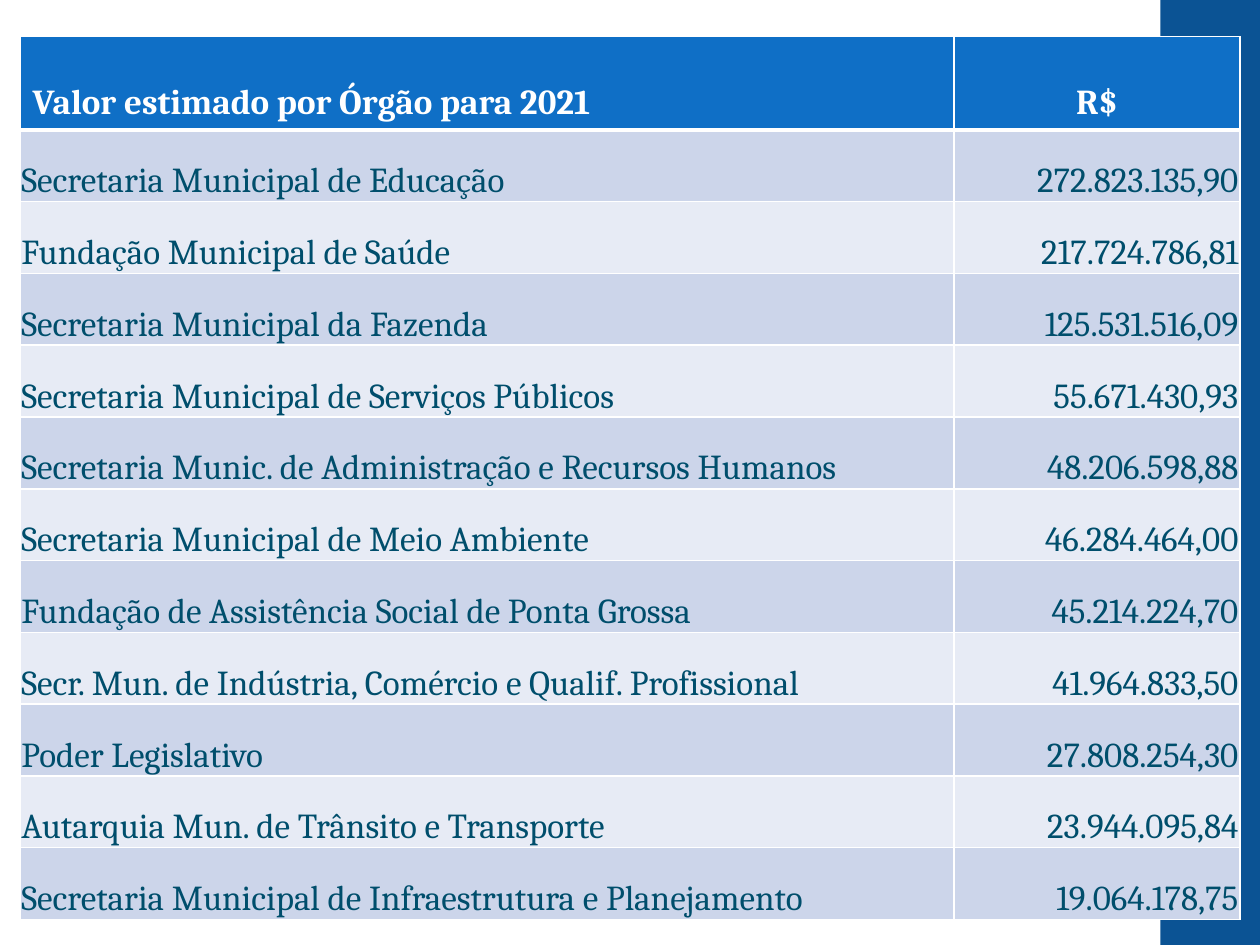
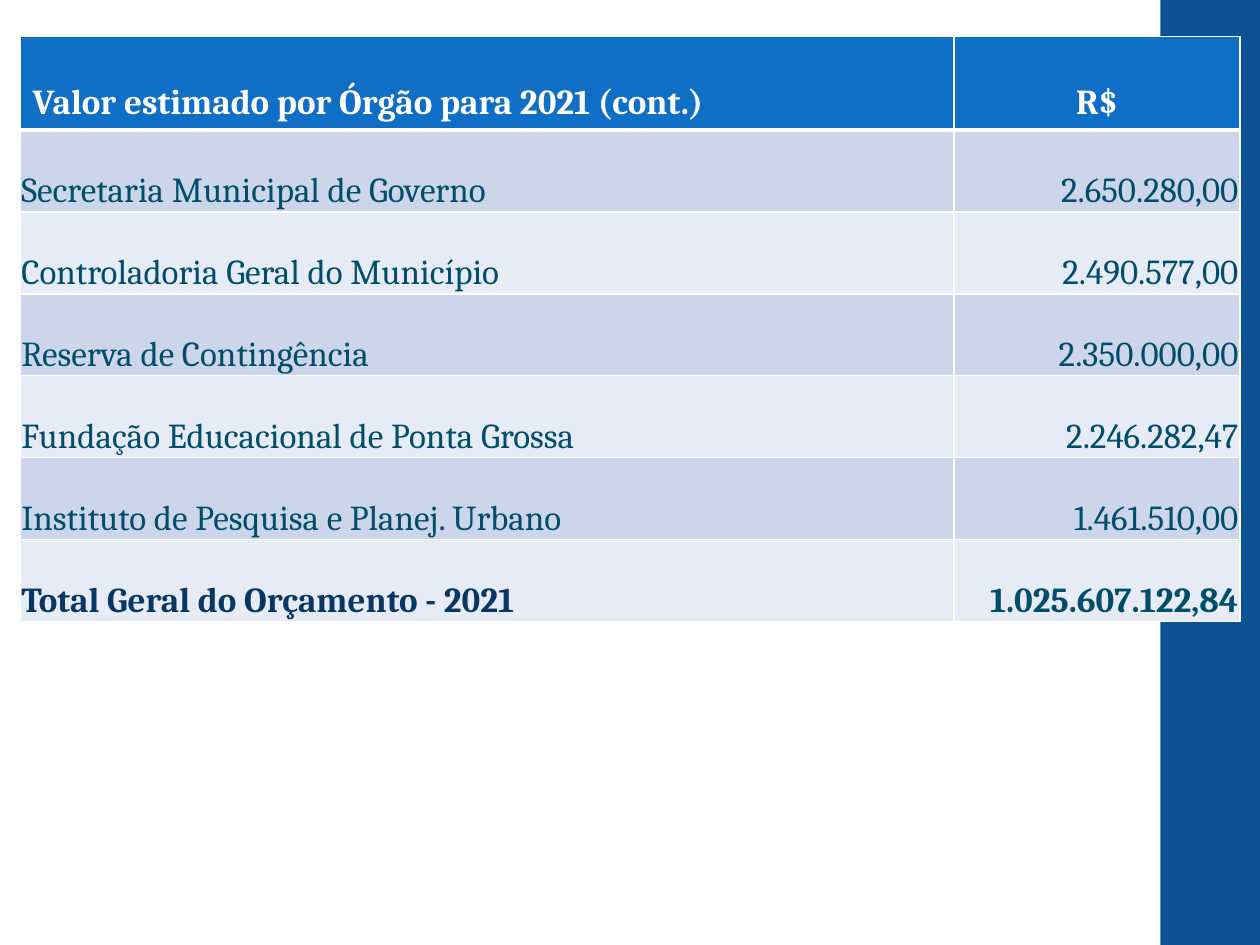
from dataclasses import dataclass

from lxml import etree
from pptx import Presentation
from pptx.dml.color import RGBColor
from pptx.enum.shapes import MSO_SHAPE
from pptx.enum.text import MSO_ANCHOR, PP_ALIGN
from pptx.oxml.ns import qn
from pptx.presentation import Presentation as Deck
from pptx.slide import Slide
from pptx.table import _Cell
from pptx.util import Inches, Pt

RECTANGLE = MSO_SHAPE.RECTANGLE
LEFT, CENTER, RIGHT = PP_ALIGN.LEFT, PP_ALIGN.CENTER, PP_ALIGN.RIGHT
MIDDLE, BOTTOM = MSO_ANCHOR.MIDDLE, MSO_ANCHOR.BOTTOM


@dataclass(frozen=True)
class Theme:
    font: str = "Cambria"
    size: int = 20
    side_band: str = "0B5394"
    header: str = "0F6FC6"
    stripes: tuple[str, str] = ("CCD5EA", "E7EBF5")
    body_text: str = "004E6C"
    total_text: str = "083763"
    white: str = "FFFFFF"
    rule: int = 1
    header_rule: int = 3
    line_spacing: float = 2.0
    paragraph_gap: int = 6


@dataclass(frozen=True)
class Grid:
    width: float = 10
    height: float = 7.5
    band_left: float = 9.21
    left: float = 0.16
    top: float = 0.29
    columns: tuple[float, float] = (7.41, 2.27)
    header_row: float = 0.73
    cell_inset: float = 0.01


@dataclass(frozen=True)
class CellStyle:
    fill: str
    color: str
    align: PP_ALIGN
    bold: bool = False
    header: bool = False
    top_rule: int = 1
    spacing: float = 1.0
    gap: int = 0


@dataclass(frozen=True)
class Budget:
    heading: str
    row_height: float
    spacing: float
    agencies: tuple[tuple[str, str], ...]
    total: tuple[str, str] | None = None


THEME = Theme()
GRID = Grid()

BUDGETS = (
    Budget(
        "Valor estimado por Órgão para 2021", 0.57, 1.0,
        (
            ("Secretaria Municipal de Educação", "272.823.135,90"),
            ("Fundação Municipal de Saúde", "217.724.786,81"),
            ("Secretaria Municipal da Fazenda", "125.531.516,09"),
            ("Secretaria Municipal de Serviços Públicos", "55.671.430,93"),
            ("Secretaria Munic. de Administração e Recursos Humanos", "48.206.598,88"),
            ("Secretaria Municipal de Meio Ambiente", "46.284.464,00"),
            ("Fundação de Assistência Social de Ponta Grossa", "45.214.224,70"),
            ("Secr. Mun. de Indústria, Comércio e Qualif. Profissional", "41.964.833,50"),
            ("Poder Legislativo", "27.808.254,30"),
            ("Autarquia Mun. de Trânsito e Transporte", "23.944.095,84"),
            ("Secretaria Municipal de Infraestrutura e Planejamento", "19.064.178,75"),
        ),
    ),
    Budget(
        "Valor estimado por Órgão para 2021 (cont.)", 0.65, THEME.line_spacing,
        (
            ("Secretaria Municipal de Governo", "2.650.280,00"),
            ("Controladoria Geral do Município", "2.490.577,00"),
            ("Reserva de Contingência", "2.350.000,00"),
            ("Fundação Educacional de Ponta Grossa", "2.246.282,47"),
            ("Instituto de Pesquisa e Planej. Urbano", "1.461.510,00"),
        ),
        ("Total Geral do Orçamento - 2021", "1.025.607.122,84"),
    ),
)


def rgb(value: str) -> RGBColor:
    return RGBColor.from_string(value)


def add_side_band(deck: Deck, slide: Slide) -> None:
    band = slide.shapes.add_shape(
        RECTANGLE, Inches(GRID.band_left), 0,
        Inches(GRID.width - GRID.band_left), Inches(GRID.height),
    )
    band.shadow.inherit = False
    band.fill.solid()
    band.fill.fore_color.rgb = rgb(THEME.side_band)
    band.line.fill.background()
    deck.slide_master.shapes.element.insert(2, band.element)


def set_borders(cell: _Cell, top: int, bottom: int) -> None:
    properties = cell._tc.get_or_add_tcPr()
    rules = {"lnL": THEME.rule, "lnR": THEME.rule, "lnT": top, "lnB": bottom}
    for position, (side, points) in enumerate(rules.items()):
        line = etree.Element(qn(f"a:{side}"), w=str(Pt(points)))
        fill = etree.SubElement(line, qn("a:solidFill"))
        etree.SubElement(fill, qn("a:srgbClr"), val=THEME.white)
        properties.insert(position, line)


def fill_cell(cell: _Cell, text: str, style: CellStyle) -> None:
    cell.text = text
    cell.fill.solid()
    cell.fill.fore_color.rgb = rgb(style.fill)
    cell.vertical_anchor = MIDDLE if style.header else BOTTOM
    if not style.header:
        cell.margin_left = cell.margin_right = cell.margin_top = Inches(GRID.cell_inset)
        cell.margin_bottom = 0
    set_borders(cell, style.top_rule, THEME.header_rule if style.header else THEME.rule)

    paragraph = cell.text_frame.paragraphs[0]
    paragraph.alignment = style.align
    paragraph.line_spacing = style.spacing
    paragraph.space_before = paragraph.space_after = Pt(style.gap)
    paragraph.font.name = THEME.font
    paragraph.font.size = Pt(THEME.size)
    paragraph.font.bold = style.bold
    paragraph.font.color.rgb = rgb(style.color)


def add_budget_table(slide: Slide, budget: Budget) -> None:
    entries = budget.agencies + ((budget.total,) if budget.total else ())
    height = GRID.header_row + budget.row_height * len(entries)
    table = slide.shapes.add_table(
        len(entries) + 1, len(GRID.columns), Inches(GRID.left), Inches(GRID.top),
        Inches(sum(GRID.columns)), Inches(height),
    ).table
    for column, width in zip(table.columns, GRID.columns):
        column.width = Inches(width)
    for row in table.rows:
        row.height = Inches(budget.row_height)
    table.rows[0].height = Inches(GRID.header_row)

    for column, (text, align) in enumerate(((budget.heading, LEFT), ("R$", CENTER))):
        fill_cell(table.cell(0, column), text, CellStyle(
            THEME.header, THEME.white, align, bold=True, header=True,
            spacing=THEME.line_spacing, gap=THEME.paragraph_gap,
        ))

    for index, entry in enumerate(entries):
        is_total = entry == budget.total
        for column, (text, align) in enumerate(zip(entry, (LEFT, RIGHT))):
            total_label = is_total and column == 0
            fill_cell(table.cell(index + 1, column), text, CellStyle(
                THEME.stripes[index % 2],
                THEME.total_text if total_label else THEME.body_text,
                align, bold=is_total,
                top_rule=THEME.rule if index else THEME.header_rule,
                spacing=budget.spacing,
                gap=THEME.paragraph_gap if total_label else 0,
            ))


def main() -> None:
    deck = Presentation()
    deck.slide_width, deck.slide_height = Inches(GRID.width), Inches(GRID.height)
    blank = deck.slide_layouts.get_by_name("Blank")
    slides = [deck.slides.add_slide(blank) for _ in BUDGETS]
    add_side_band(deck, slides[0])
    for slide, budget in zip(slides, BUDGETS):
        add_budget_table(slide, budget)
    deck.save("out.pptx")


if __name__ == "__main__":
    main()
